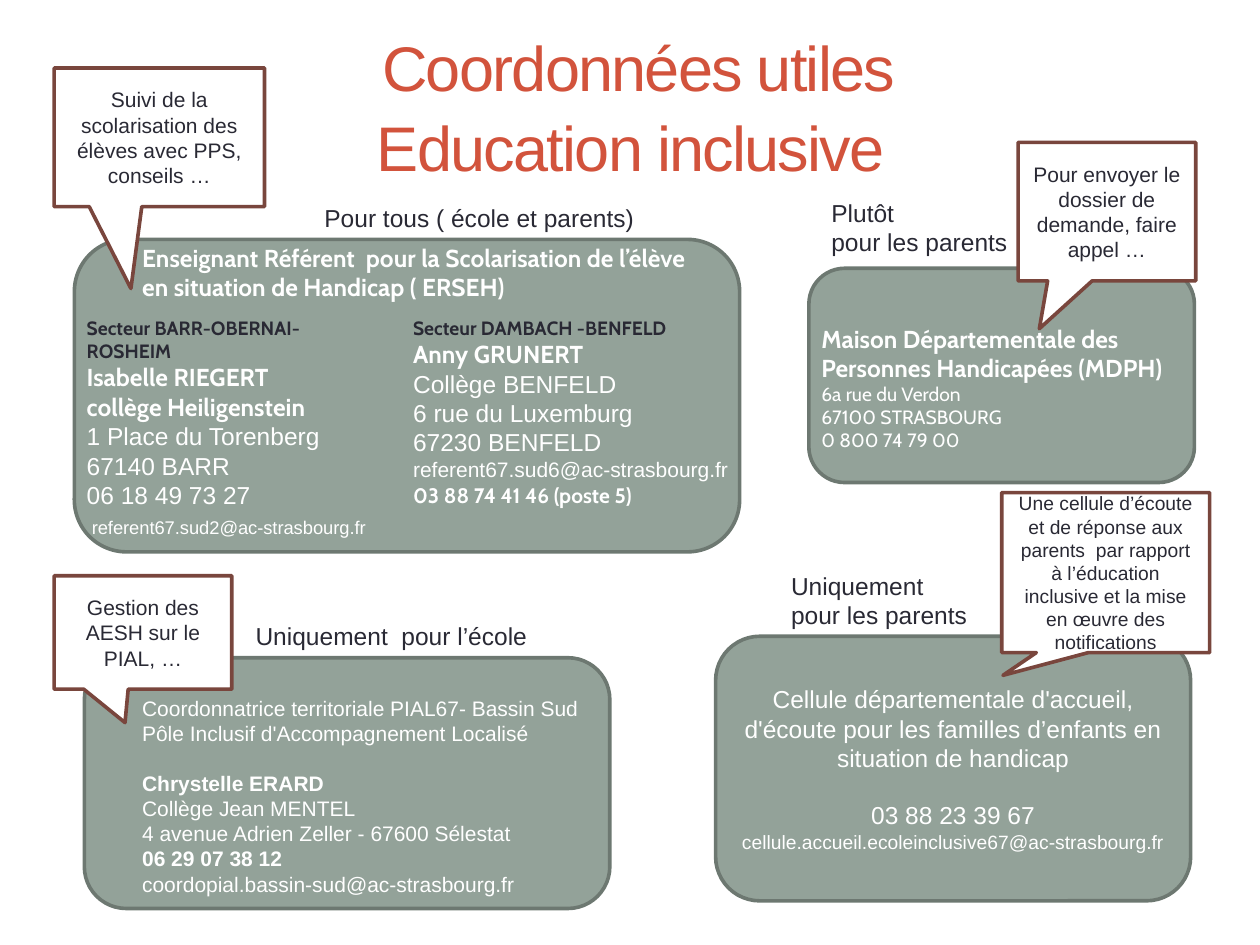
from pptx import Presentation
from pptx.dml.color import RGBColor
from pptx.enum.shapes import MSO_SHAPE
from pptx.enum.text import MSO_ANCHOR, MSO_AUTO_SIZE, PP_ALIGN
from pptx.util import Inches, Pt

SAGE = RGBColor(0x93, 0xA2, 0x99)
SAGE_DARK = RGBColor(0x6D, 0x78, 0x71)
BROWN = RGBColor(0x79, 0x46, 0x3D)
RED = RGBColor(0xD2, 0x53, 0x3C)
INK = RGBColor(0x29, 0x29, 0x34)
WHITE = RGBColor(0xFF, 0xFF, 0xFF)


def line(text, size=14, font="Arial", bold=False, color=WHITE, before=0):
    """Describe one paragraph of a contact card."""
    return text, size, font, bold, color, before


def write(frame, lines, align=PP_ALIGN.LEFT):
    frame.word_wrap = True
    for index, (text, size, font, bold, color, before) in enumerate(lines):
        paragraph = frame.add_paragraph() if index else frame.paragraphs[0]
        paragraph.text = text
        paragraph.alignment = align
        if before:
            paragraph.space_before = Pt(before)
        for run in paragraph.runs:
            run.font.name = font
            run.font.size = Pt(size)
            run.font.bold = bold
            run.font.color.rgb = color


def add_text(slide, box, lines, align=PP_ALIGN.LEFT):
    textbox = slide.shapes.add_textbox(*map(Inches, box))
    write(textbox.text_frame, lines, align)


def add_label(slide, box, *texts, align=PP_ALIGN.LEFT):
    add_text(slide, box, [line(text, color=INK) for text in texts], align)


def add_outlined(slide, kind, box, fill, outline):
    shape = slide.shapes.add_shape(kind, *map(Inches, box))
    shape.shadow.inherit = False
    shape.fill.solid()
    shape.fill.fore_color.rgb = fill
    shape.line.color.rgb = outline
    shape.line.width = Pt(2.08)
    shape.text_frame.vertical_anchor = MSO_ANCHOR.MIDDLE
    return shape


def add_card(slide, box):
    return add_outlined(slide, MSO_SHAPE.ROUNDED_RECTANGLE, box, SAGE, SAGE_DARK)


def add_callout(slide, box, tip, text, size=12):
    callout = add_outlined(slide, MSO_SHAPE.RECTANGULAR_CALLOUT, box, WHITE, BROWN)
    callout.adjustments[0], callout.adjustments[1] = tip
    write(callout.text_frame, [line(text, size, color=INK)], PP_ALIGN.CENTER)


def add_title(slide):
    title = slide.shapes.title
    title.left, title.top, title.width, title.height = map(Inches, (0.57, 0.36, 9, 0.94))
    frame = title.text_frame
    frame.auto_size = MSO_AUTO_SIZE.NONE
    frame.vertical_anchor = MSO_ANCHOR.MIDDLE
    write(frame, [line("Coordonnées utiles\vEducation inclusive ", 36, color=RED)],
          PP_ALIGN.CENTER)
    heading = frame.paragraphs[0]
    heading.line_spacing = 1.05
    for run in heading.runs:
        run.font._element.set("spc", "-100")


def add_referents(slide):
    add_label(slide, (2.24, 1.56, 3.13, 0.34), "Pour tous ( école et parents)",
              align=PP_ALIGN.CENTER)
    add_text(slide, (1.03, 1.88, 4.65, 0.58), [
        line("Enseignant Référent  pour la Scolarisation de l’élève "
             "en situation de Handicap ( ERSEH)", font="Cabin", bold=True)])
    add_text(slide, (0.59, 2.46, 2.47, 1.88), [
        line("Secteur BARR-OBERNAI-ROSHEIM", 11, "Cabin", True, INK),
        line("Isabelle RIEGERT", font="Cabin", bold=True),
        line("collège Heiligenstein", font="Cabin", bold=True),
        line("1 Place du Torenberg"),
        line("67140 BARR"),
        line("06 18 49 73 27"),
        line(" referent67.sud2@ac-strasbourg.fr", 10.5, before=4)])
    add_text(slide, (3.18, 2.46, 2.79, 1.63), [
        line("Secteur DAMBACH -BENFELD", 11, "Cabin", True, INK),
        line("Anny GRUNERT", font="Cabin", bold=True),
        line("Collège BENFELD"),
        line("6 rue du Luxemburg"),
        line("67230 BENFELD"),
        line("referent67.sud6@ac-strasbourg.fr", 12),
        line("03 88 74 41 46 (poste 5)", 12, "Cabin", True)])


def add_mdph(slide):
    add_label(slide, (6.5, 1.52, 1.73, 0.57), "Plutôt", "pour les parents")
    add_text(slide, (6.42, 2.52, 3.06, 1.43), [
        line("Maison Départementale des Personnes Handicapées (MDPH)",
             font="Cabin", bold=True),
        line("6a rue du Verdon", 11, "Cabin"),
        line("67100 STRASBOURG", 11, "Cabin"),
        line("0 800 74 79 00", 11, "Cabin")])


def add_pial(slide):
    add_label(slide, (1.93, 4.88, 2.5, 0.34), "Uniquement  pour l’école")
    add_text(slide, (1.03, 5.47, 4.17, 1.7), [
        line("Coordonnatrice territoriale PIAL67- Bassin Sud", 12),
        line("Pôle Inclusif d'Accompagnement Localisé", 12),
        line("Chrystelle ERARD", 12, bold=True, before=14),
        line("Collège Jean MENTEL", 12),
        line("4 avenue Adrien Zeller - 67600 Sélestat", 12),
        line("06 29 07 38 12", 12, bold=True),
        line("coordopial.bassin-sud@ac-strasbourg.fr", 12)])


def add_helpline(slide, card):
    add_label(slide, (6.18, 4.48, 1.7, 0.57), "Uniquement", "pour les parents")
    write(card.text_frame, [
        line("Cellule départementale d'accueil, d'écoute pour les familles "
             "d’enfants en situation de handicap"),
        line("03 88 23 39 67", before=16),
        line("cellule.accueil.ecoleinclusive67@ac-strasbourg.fr", 11)],
        PP_ALIGN.CENTER)


def main():
    presentation = Presentation()
    presentation.slide_width = Inches(10)
    presentation.slide_height = Inches(7.5)
    slide = presentation.slides.add_slide(presentation.slide_layouts[5])
    add_title(slide)

    # Green cards, behind everything else
    add_card(slide, (6.42, 2.13, 3.06, 1.7))
    add_card(slide, (0.59, 1.9, 5.28, 2.48))
    add_card(slide, (0.67, 5.22, 4.17, 1.99))
    helpline_card = add_card(slide, (5.68, 5.05, 3.77, 2.1))

    # Callouts saying what each contact is for
    add_callout(slide, (0.43, 0.54, 1.67, 1.1), (-0.135, 1.091),
                "Suivi de la scolarisation des élèves avec PPS, conseils …")
    add_callout(slide, (8.08, 1.13, 1.41, 1.1), (-0.38, 0.845),
                "Pour envoyer le dossier de demande, faire appel …")
    add_callout(slide, (0.43, 4.57, 1.41, 0.9), (-0.101, 0.795),
                "Gestion des AESH sur le PIAL, …")
    add_callout(slide, (7.95, 3.91, 1.65, 1.27), (-0.494, 0.642),
                "Une cellule d’écoute et de réponse aux parents  par rapport à "
                "l’éducation inclusive et la mise en œuvre des notifications", 11)

    # Contact details
    add_referents(slide)
    add_mdph(slide)
    add_pial(slide)
    add_helpline(slide, helpline_card)
    presentation.save("out.pptx")


if __name__ == "__main__":
    main()
